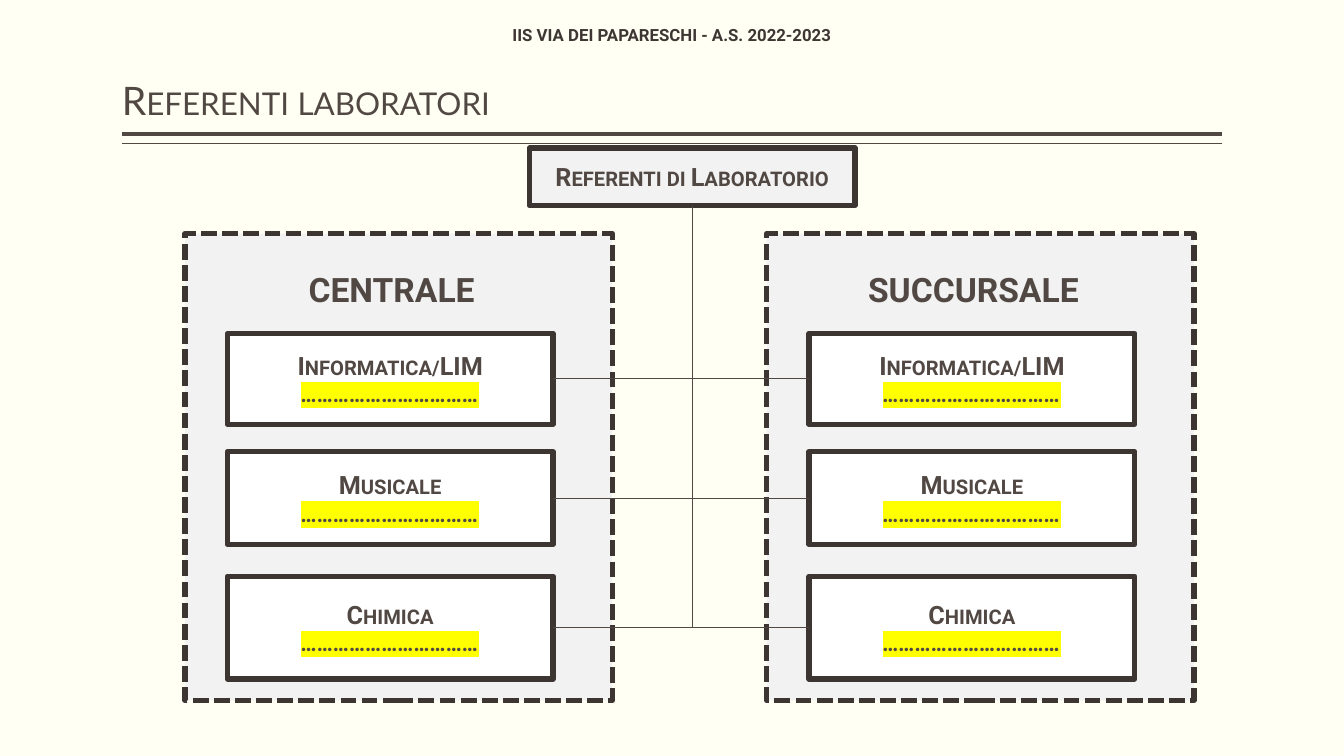
from pptx import Presentation
from pptx.dml.color import RGBColor
from pptx.enum.dml import MSO_LINE
from pptx.enum.shapes import MSO_CONNECTOR, MSO_SHAPE
from pptx.enum.text import MSO_ANCHOR, PP_ALIGN
from pptx.oxml.ns import qn
from pptx.util import Cm, Pt
from lxml import etree

RECTANGLE = MSO_SHAPE.RECTANGLE
STRAIGHT, ELBOW = MSO_CONNECTOR.STRAIGHT, MSO_CONNECTOR.ELBOW
DASHED = MSO_LINE.SQUARE_DOT
LEFT, CENTER = PP_ALIGN.LEFT, PP_ALIGN.CENTER
TOP, MIDDLE, BOTTOM = MSO_ANCHOR.TOP, MSO_ANCHOR.MIDDLE, MSO_ANCHOR.BOTTOM
BOTTOM_SIDE, LEFT_SIDE, RIGHT_SIDE = 2, 1, 3

COLORS = {
    "background": "FFFFF3",
    "panel": "F2F2F2",
    "card": "FFFFFF",
    "border": "3C3532",
    "text": "514843",
    "header": "3D3632",
    "highlight": "FFFF00",
}
SLIDE_WIDTH, SLIDE_HEIGHT = 33.87, 19.05
CARD_WIDTH = 8.21
DOTS = "……………………………"
LABS = [("Informatica/LIM", 2.51, 2.29), ("Musicale", 5.49, 2.34), ("Chimica", 8.63, 2.59)]
SITES = [("CENTRALE", 4.66, RIGHT_SIDE), ("SUCCURSALE", 19.32, LEFT_SIDE)]


def color(name):
    """Return the named colour."""
    return RGBColor.from_string(COLORS[name])


def write(para, text, size=18, font="Roboto", ink="text", bold=True, italic=False,
          small_caps=False, highlight=None, align=CENTER):
    """Add one formatted span of text to a paragraph."""
    para.alignment = align
    span = para.add_run()
    span.text = text
    span.font.size = Pt(size)
    span.font.bold = bold
    span.font.italic = italic
    span.font.color.rgb = color(ink)
    span.font.name = font
    properties = span.font._element
    if small_caps:
        properties.set("cap", "small")
    if highlight:
        mark = etree.Element(qn("a:highlight"))
        etree.SubElement(mark, qn("a:srgbClr")).set("val", COLORS[highlight])
        properties.find(qn("a:latin")).addprevious(mark)


def add_label(page, text, left, top, width, height, anchor=TOP, inset=0.25, **style):
    """Place a one-paragraph text box and return its paragraph."""
    frame = page.shapes.add_textbox(Cm(left), Cm(top), Cm(width), Cm(height)).text_frame
    frame.word_wrap = True
    frame.vertical_anchor = anchor
    frame.margin_left = frame.margin_right = Cm(inset)
    para = frame.paragraphs[0]
    write(para, text, **style)
    return para


def add_box(page, left, top, width, height, fill, dash=None):
    """Place a heavily outlined rectangle."""
    box = page.shapes.add_shape(RECTANGLE, Cm(left), Cm(top), Cm(width), Cm(height))
    box.shadow.inherit = False
    box.fill.solid()
    box.fill.fore_color.rgb = color(fill)
    box.line.color.rgb = color("border")
    box.line.width = Pt(3.78)
    if dash:
        box.line.dash_style = dash
    box.text_frame.word_wrap = True
    box.text_frame.vertical_anchor = MIDDLE
    return box


def add_line(page, kind, start_x, start_y, end_x, end_y, weight):
    """Draw a connector between two points."""
    line = page.shapes.add_connector(kind, start_x, start_y, end_x, end_y)
    line.line.color.rgb = color("text")
    line.line.width = Pt(weight)
    etree.SubElement(line._element.spPr, qn("a:effectLst"))
    return line


def add_branch(page, root, card, side):
    """Join the root to a card with one bend: straight down, then sideways."""
    branch = add_line(page, ELBOW, 0, 0, 0, 0, 0.5)
    branch.begin_connect(root, BOTTOM_SIDE)
    branch.end_connect(card, side)
    start_x, start_y = root.left + root.width // 2, root.top + root.height
    end_x = card.left + card.width if side == RIGHT_SIDE else card.left
    end_y = card.top + card.height // 2
    across, down = abs(end_x - start_x), end_y - start_y
    branch.left = (start_x + end_x - down) // 2
    branch.top = (start_y + end_y - across) // 2
    branch.width, branch.height = down, across
    properties = branch._element.spPr
    properties.find(qn("a:prstGeom")).set("prst", "bentConnector2")
    frame = properties.find(qn("a:xfrm"))
    turn, flip = ("5400000", "0") if side == RIGHT_SIDE else ("16200000", "1")
    frame.set("rot", turn)
    frame.set("flipH", flip)
    frame.set("flipV", "0")


def add_heading(page, left, top, width, height):
    """Place the school header, the slide title and its double rule."""
    add_label(page, "IIS VIA DEI PAPARESCHI - A.S. 2022-2023", 0, 0.38, SLIDE_WIDTH, 1.02,
              anchor=MIDDLE, inset=0, size=12, ink="header")
    title = add_label(page, "Referenti laboratori", left, top, width, height, anchor=BOTTOM,
                      inset=0, size=28, font="Lato", bold=False, small_caps=True, align=LEFT)
    title.line_spacing = 0.9
    for gap, weight in ((0.13, 3), (0.37, 1)):
        rule = Cm(top + height + gap)
        add_line(page, STRAIGHT, Cm(left + width), rule, Cm(left), rule, weight)


def add_site(page, name, left, top, width, height):
    """Place a site's dashed panel and return its laboratory cards."""
    add_box(page, left, top, width, height, "panel", DASHED)
    inner = left + 1.07
    add_label(page, name, inner, top + 0.76, CARD_WIDTH + 0.07, 1.27, size=24)
    cards = []
    for lab, offset, card_height in LABS:
        card = add_box(page, inner, top + offset, CARD_WIDTH, card_height, "card")
        frame = card.text_frame
        write(frame.paragraphs[0], lab, small_caps=True)
        write(frame.add_paragraph(), DOTS, size=16, italic=True, highlight="highlight")
        cards.append(card)
    return cards


def add_chart_tree(page, left, top):
    """Place the root box, both sites and the lines that join them."""
    root = add_box(page, left, top, CARD_WIDTH, 1.45, "panel")
    write(root.text_frame.paragraphs[0], "Referenti di Laboratorio", small_caps=True)
    for name, site_left, side in SITES:
        for card in add_site(page, name, site_left, top + 2.16, 10.77, 11.76):
            add_branch(page, root, card, side)


def main():
    """Build and save the slide."""
    deck = Presentation()
    deck.slide_width, deck.slide_height = Cm(SLIDE_WIDTH), Cm(SLIDE_HEIGHT)
    page = deck.slides.add_slide(deck.slide_layouts[6])
    page.background.fill.solid()
    page.background.fill.fore_color.rgb = color("background")
    add_heading(page, 3.07, 0.2, 27.73, 3.05)
    add_chart_tree(page, 13.34, 3.73)
    deck.save("out.pptx")


if __name__ == "__main__":
    main()
